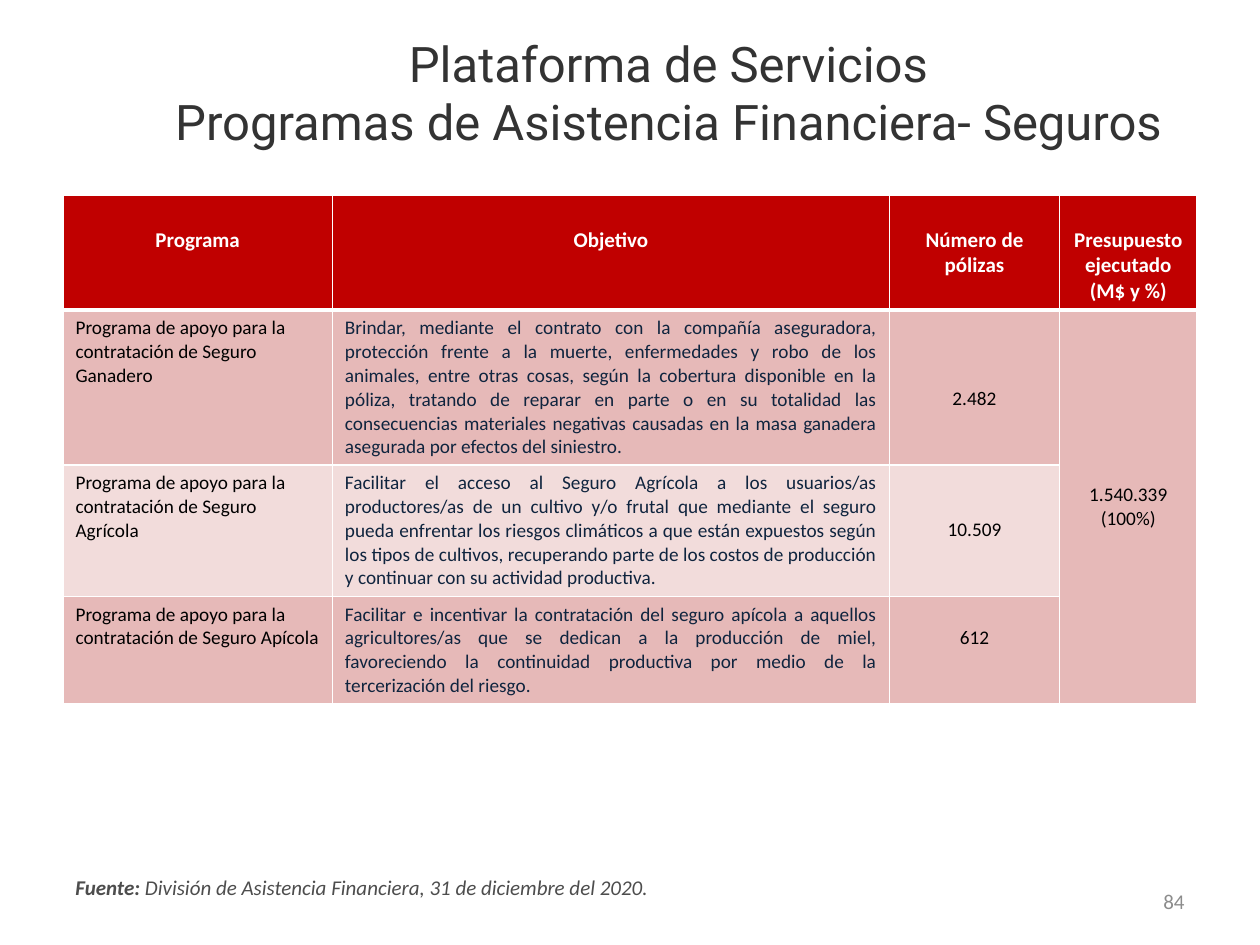
from pptx import Presentation
from pptx.dml.color import RGBColor
from pptx.enum.text import MSO_ANCHOR, PP_ALIGN
from pptx.oxml import parse_xml
from pptx.oxml.ns import nsdecls
from pptx.util import Cm, Pt

WHITE = RGBColor(0xFF, 0xFF, 0xFF)
BLACK = RGBColor(0x00, 0x00, 0x00)
RED = RGBColor(0xC0, 0x00, 0x00)
ROSE = RGBColor(0xE6, 0xB9, 0xB8)
PALE_ROSE = RGBColor(0xF2, 0xDC, 0xDB)
NAVY = RGBColor(0x0F, 0x24, 0x3E)
CHARCOAL = RGBColor(0x33, 0x33, 0x33)
DARK_GRAY = RGBColor(0x4D, 0x4D, 0x4D)
GRAY = RGBColor(0x8C, 0x8C, 0x8C)

TITLE = "Plataforma de Servicios\vProgramas de Asistencia Financiera- Seguros"
HEADERS = ["Programa", "Objetivo", "Número de pólizas", "Presupuesto ejecutado (M$ y %)"]
PROGRAMS = [
    ("Programa de apoyo para la contratación de Seguro Ganadero",
     "Brindar, mediante el contrato con la compañía aseguradora, protección frente a la muerte, "
     "enfermedades y robo de los animales, entre otras cosas, según la cobertura disponible en la "
     "póliza, tratando de reparar en parte o en su totalidad las consecuencias materiales negativas "
     "causadas en la masa ganadera asegurada por efectos del siniestro.",
     "2.482", 1.55),
    ("Programa de apoyo para la contratación de Seguro Agrícola",
     "Facilitar el acceso al Seguro Agrícola a los usuarios/as productores/as de un cultivo y/o "
     "frutal que mediante el seguro pueda enfrentar los riesgos climáticos a que están expuestos "
     "según los tipos de cultivos, recuperando parte de los costos de producción y continuar con su "
     "actividad productiva.",
     "10.509", 1.08),
    ("Programa de apoyo para la contratación de Seguro Apícola",
     "Facilitar e incentivar la contratación del seguro apícola a aquellos agricultores/as que se "
     "dedican a la producción de miel, favoreciendo la continuidad productiva por medio de la "
     "tercerización del riesgo.",
     "612", 0.6),
]
BUDGET = "1.540.339\n(100%)"
COLUMN_WIDTHS = [5.43, 11.23, 3.43, 2.77]
ROW_HEIGHTS = [2.31, 3.12, 2.65, 2.16]


def style_text(frame, size, color, align=PP_ALIGN.LEFT, name="Calibri", bold=False):
    for paragraph in frame.paragraphs:
        paragraph.alignment = align
        for span in paragraph.runs:
            span.font.name = name
            span.font.size = Pt(size)
            span.font.bold = bold
            span.font.color.rgb = color


def add_text(page, left, top, width, height, text, anchor=MSO_ANCHOR.TOP):
    box = page.shapes.add_textbox(Cm(left), Cm(top), Cm(width), Cm(height))
    frame = box.text_frame
    frame.word_wrap = True
    frame.vertical_anchor = anchor
    frame.text = text
    return frame


def set_borders(cell, bottom):
    properties = cell._tc.get_or_add_tcPr()
    widths = {"lnL": 1, "lnR": 1, "lnT": 1, "lnB": bottom}
    for position, (side, width) in enumerate(widths.items()):
        properties.insert(position, parse_xml(
            f'<a:{side} {nsdecls("a")} w="{Pt(width)}"><a:solidFill>'
            f'<a:srgbClr val="{WHITE}"/></a:solidFill></a:{side}>'))


def fill_cell(cell, text, fill, size=11, color=BLACK, align=PP_ALIGN.CENTER,
              bold=False, margin_top=0.13):
    cell.text = text
    cell.margin_top = Cm(margin_top)
    cell.fill.solid()
    cell.fill.fore_color.rgb = fill
    style_text(cell.text_frame, size, color, align, bold=bold)


def add_program_table(page):
    frame = page.shapes.add_table(len(ROW_HEIGHTS), len(COLUMN_WIDTHS), Cm(1.27), Cm(3.94),
                                  Cm(sum(COLUMN_WIDTHS)), Cm(sum(ROW_HEIGHTS)))
    table = frame.table
    for column, width in zip(table.columns, COLUMN_WIDTHS):
        column.width = Cm(width)
    for row, height in zip(table.rows, ROW_HEIGHTS):
        row.height = Cm(height)

    for cell, header in zip(table.rows[0].cells, HEADERS):
        fill_cell(cell, header, RED, 12, WHITE, bold=True, margin_top=0.64)
        set_borders(cell, 3)

    for number, (program, goal, policies, margin_top) in enumerate(PROGRAMS, 1):
        fill = ROSE if number % 2 else PALE_ROSE
        cells = table.rows[number].cells
        fill_cell(cells[0], program, fill, align=PP_ALIGN.LEFT)
        fill_cell(cells[1], goal, fill, color=NAVY, align=PP_ALIGN.JUSTIFY)
        fill_cell(cells[2], policies, fill, margin_top=margin_top)
        fill_cell(cells[3], "", ROSE)
        for cell in cells:
            set_borders(cell, 1)

    budget = table.cell(1, 3)
    budget.merge(table.cell(3, 3))
    fill_cell(budget, BUDGET, ROSE)
    budget.vertical_anchor = MSO_ANCHOR.MIDDLE


def main():
    deck = Presentation()
    deck.slide_width, deck.slide_height = Cm(25.4), Cm(19.05)
    page = deck.slides.add_slide(deck.slide_layouts[6])

    title = add_text(page, 2.82, 0.81, 21.31, 3.18, TITLE, MSO_ANCHOR.MIDDLE)
    title.margin_bottom = Cm(1.22)
    style_text(title, 28, CHARCOAL, PP_ALIGN.CENTER, "Roboto")

    add_program_table(page)

    source = add_text(page, 1.27, 17.5, 20.8, 0.76, "Fuente: ")
    source.paragraphs[0].add_run().text = "División de Asistencia Financiera, 31 de diciembre del 2020."
    style_text(source, 12, DARK_GRAY)
    for span in source.paragraphs[0].runs:
        span.font.italic = True
    source.paragraphs[0].runs[0].font.bold = True

    page_number = add_text(page, 18.21, 17.65, 5.92, 1.02, "84", MSO_ANCHOR.MIDDLE)
    style_text(page_number, 12, GRAY, PP_ALIGN.RIGHT)

    deck.save("out.pptx")


if __name__ == "__main__":
    main()
